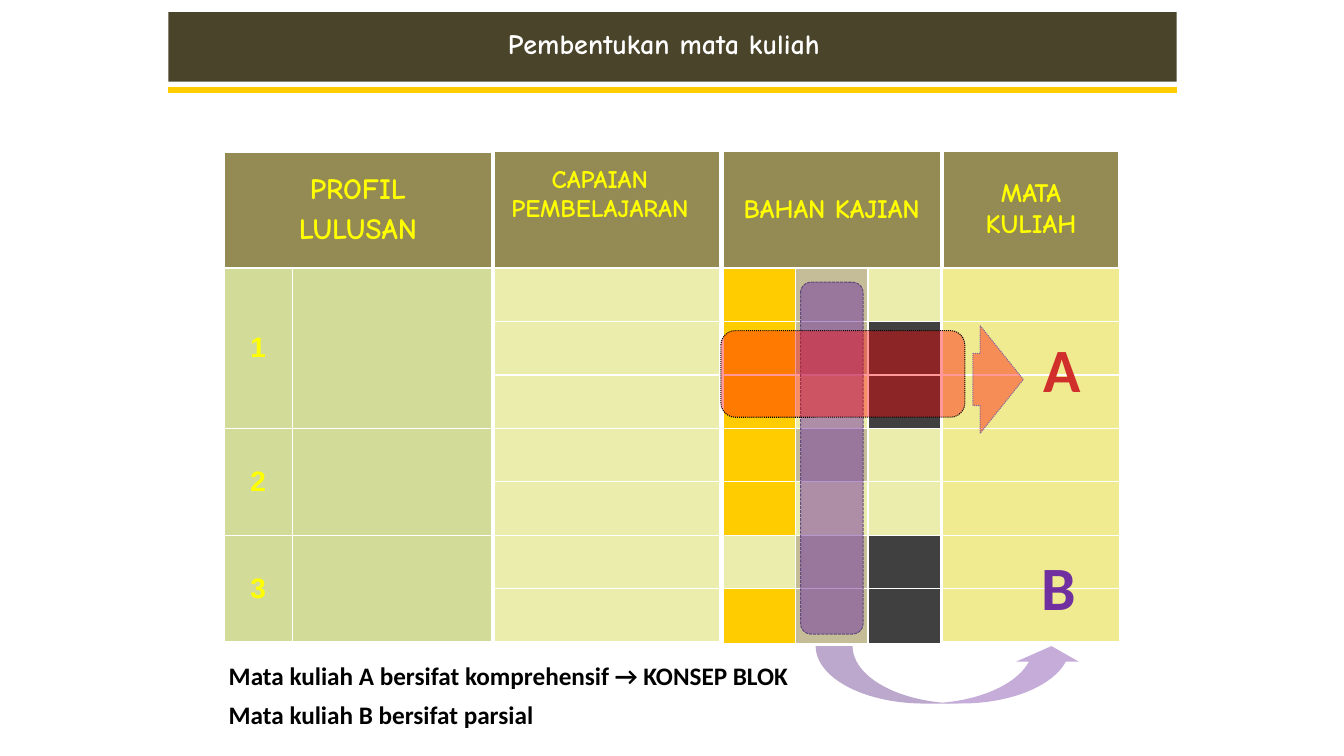
from lxml import etree
from pptx import Presentation
from pptx.dml.color import RGBColor
from pptx.enum.dml import MSO_LINE
from pptx.enum.shapes import MSO_CONNECTOR, MSO_SHAPE
from pptx.enum.text import MSO_ANCHOR, MSO_AUTO_SIZE, PP_ALIGN
from pptx.oxml.ns import qn
from pptx.util import Inches, Pt

CENTER, LEFT, MIDDLE = PP_ALIGN.CENTER, PP_ALIGN.LEFT, MSO_ANCHOR.MIDDLE
DASH, DOT = MSO_LINE.SQUARE_DOT, MSO_LINE.ROUND_DOT
ROUND = MSO_SHAPE.ROUNDED_RECTANGLE
COMIC, ARIAL, CALIBRI = "Comic Neue", "Arial", "Calibri"

# Content
TITLE = "Pembentukan mata kuliah"
GOLD, TAN, PALE, DARK = "FFCC00", "C4BD97", "EBEDAD", "404040"
SAGE, CREAM, OLIVE = "D2DC98", "F0EB90", "948A54"
YELLOW, WHITE, BLACK = "FFFF00", "FFFFFF", "000000"
RED, PURPLE = "FF0000", "7030A0"

TOP, HEAD, UNIT = 1.5, 1.16, 0.53
SINGLE = [UNIT] * 7
TOPICS = [
    (GOLD, TAN, PALE),
    (GOLD, TAN, DARK),
    (GOLD, PALE, DARK),
    (GOLD, TAN, PALE),
    (GOLD, PALE, PALE),
    (PALE, TAN, DARK),
    (GOLD, TAN, DARK),
]
# heading, size, left, column widths, row heights, fills, first column, rim
TABLES = [
    ("CAPAIAN PEMBELAJARAN", 18, 4.9, [2.24], SINGLE, [(PALE,)] * 7, [], 1),
    ("BAHAN KAJIAN", 19, 7.17, [0.72] * 3, SINGLE[:-1] + [0.55], TOPICS, [], 1),
    ("MATA KULIAH", 19, 9.35, [1.75], SINGLE, [(CREAM,)] * 7, [], 1),
    ("PROFIL\nLULUSAN", 21, 2.22, [0.68, 1.98], [n * UNIT for n in (3, 2, 2)],
     [(SAGE, SAGE)] * 3, ["1", "2", "3"], 2.25),
]
# shape, place, fill, opacity, line, dash, adjustments
MARKS = [
    (MSO_SHAPE.CURVED_UP_ARROW, (8.09, 6.41, 2.65, 0.57), PURPLE, 40,
     None, None, (0.642, 1.092, 0.272)),
    (ROUND, (7.94, 2.8, 0.62, 3.49), PURPLE, 50, "604A7B", DASH, ()),
    (MSO_SHAPE.RIGHT_ARROW, (9.65, 3.23, 0.5, 1.07), RED, 40,
     "8064A2", DOT, (0.483, 0.858)),
    (ROUND, (7.15, 3.28, 2.42, 0.86), RED, 40, BLACK, DOT, ()),
]
# text, place, size, colour, alignment, wrap
LABELS = [
    ("B", (10.23, 5.4, 0.55, 0.84), 44, PURPLE, CENTER, False),
    ("A", (10.24, 3.23, 0.58, 0.84), 44, "D02F2C", CENTER, False),
    ("Mata kuliah A bersifat komprehensif → KONSEP BLOK",
     (2.17, 6.5, 6.08, 0.4), 18, BLACK, LEFT, True),
    ("Mata kuliah B bersifat parsial",
     (2.17, 6.89, 3.54, 0.4), 18, BLACK, LEFT, True),
]


def rgb(code):
    return RGBColor.from_string(code)


def box(place):
    return [Inches(n) for n in place]


def write(frame, text, size, face, color, align=CENTER, gap=0):
    frame.text = text
    for para in frame.paragraphs:
        para.alignment = align
        para.space_before = Pt(gap)
        for run in para.runs:
            font = run.font
            font.size, font.name, font.bold = Pt(size), face, True
            font.color.rgb = rgb(color)


def paint(shape, fill, alpha=100):
    shape.shadow.inherit = False
    shape.fill.solid()
    shape.fill.fore_color.rgb = rgb(fill)
    if alpha < 100:
        tint = shape.fill._xPr.find(".//" + qn("a:srgbClr"))
        etree.SubElement(tint, qn("a:alpha"), val=str(alpha * 1000))


def dress(cell, fill, left, right, top, bottom):
    props = cell._tc.get_or_add_tcPr()
    for side, width in zip("LRTB", (left, right, top, bottom)):
        line = etree.SubElement(props, qn("a:ln" + side), w=str(int(width * 12700)))
        solid = etree.SubElement(line, qn("a:solidFill"))
        etree.SubElement(solid, qn("a:srgbClr"), val=WHITE)
    cell.fill.solid()
    cell.fill.fore_color.rgb = rgb(fill)
    cell.vertical_anchor = MIDDLE


def add_grid(shapes, head, size, left, cols, rows, fills, names, rim):
    rows = [HEAD] + rows
    fills = [[OLIVE] * len(cols)] + fills
    place = box((left, TOP, sum(cols), sum(rows)))
    grid = shapes.add_table(len(rows), len(cols), *place).table
    for col, width in zip(grid.columns, cols):
        col.width = Inches(width)
    for row, height in zip(grid.rows, rows):
        row.height = Inches(height)
    for r, line in enumerate(fills):
        side = 1.5 if r == 0 else 1
        top = max(1.5, rim) if r == 0 else 2.25 if r == 1 else 1
        bottom = 2.25 if r in (0, len(rows) - 1) else 1
        for c, fill in enumerate(line):
            edge = max(side, rim) if c == 0 else side
            dress(grid.cell(r, c), fill, edge, side, top, bottom)
    if len(cols) > 1:
        grid.cell(0, 0).merge(grid.cell(0, len(cols) - 1))
    write(grid.cell(0, 0).text_frame, head, size, COMIC, YELLOW, gap=4)
    for r, name in enumerate(names, 1):
        write(grid.cell(r, 0).text_frame, name, 20, ARIAL, YELLOW, gap=4)
    return grid


def main():
    deck = Presentation()
    deck.slide_width, deck.slide_height = Inches(13.33), Inches(7.5)
    slide = deck.slides.add_slide(deck.slide_layouts[5])
    shapes = slide.shapes

    # Title bar with its gold rule
    bar = shapes.add_shape(MSO_SHAPE.RECTANGLE, *box((1.67, 0.12, 10, 0.69)))
    paint(bar, "4A452A")
    bar.line.fill.background()
    rule = shapes.add_connector(MSO_CONNECTOR.STRAIGHT, *box((1.67, 0.89, 11.67, 0.89)))
    rule.line.color.rgb = rgb(GOLD)
    rule.line.width = Pt(4.5)
    etree.SubElement(rule._element.spPr, qn("a:effectLst"))

    # Title, raised above the bar
    title = shapes.title
    title.left, title.top, title.width, title.height = box((2.25, 0.21, 8.67, 0.44))
    write(title.text_frame, TITLE, 20, COMIC, WHITE)
    title.text_frame.vertical_anchor = MIDDLE
    title.text_frame.auto_size = MSO_AUTO_SIZE.NONE
    bar._element.getparent().append(title._element)

    # Tables; the first heading sits up and to the left
    grids = [add_grid(shapes, *spec_row) for spec_row in TABLES]
    first = grids[0].cell(0, 0)
    first.margin_right, first.margin_bottom = Inches(0.24), Inches(0.35)

    # Translucent bands and arrows
    for kind, place, fill, alpha, line, dash, adjust in MARKS:
        mark = shapes.add_shape(kind, *box(place))
        paint(mark, fill, alpha)
        for i, value in enumerate(adjust):
            mark.adjustments[i] = value
        if line:
            mark.line.color.rgb = rgb(line)
            mark.line.width = Pt(0.75)
            mark.line.dash_style = dash
        else:
            mark.line.fill.background()

    # Course letters and captions
    for text, place, size, color, align, wrap in LABELS:
        frame = shapes.add_textbox(*box(place)).text_frame
        frame.word_wrap = wrap
        write(frame, text, size, CALIBRI, color, align)

    deck.save("out.pptx")


if __name__ == "__main__":
    main()
